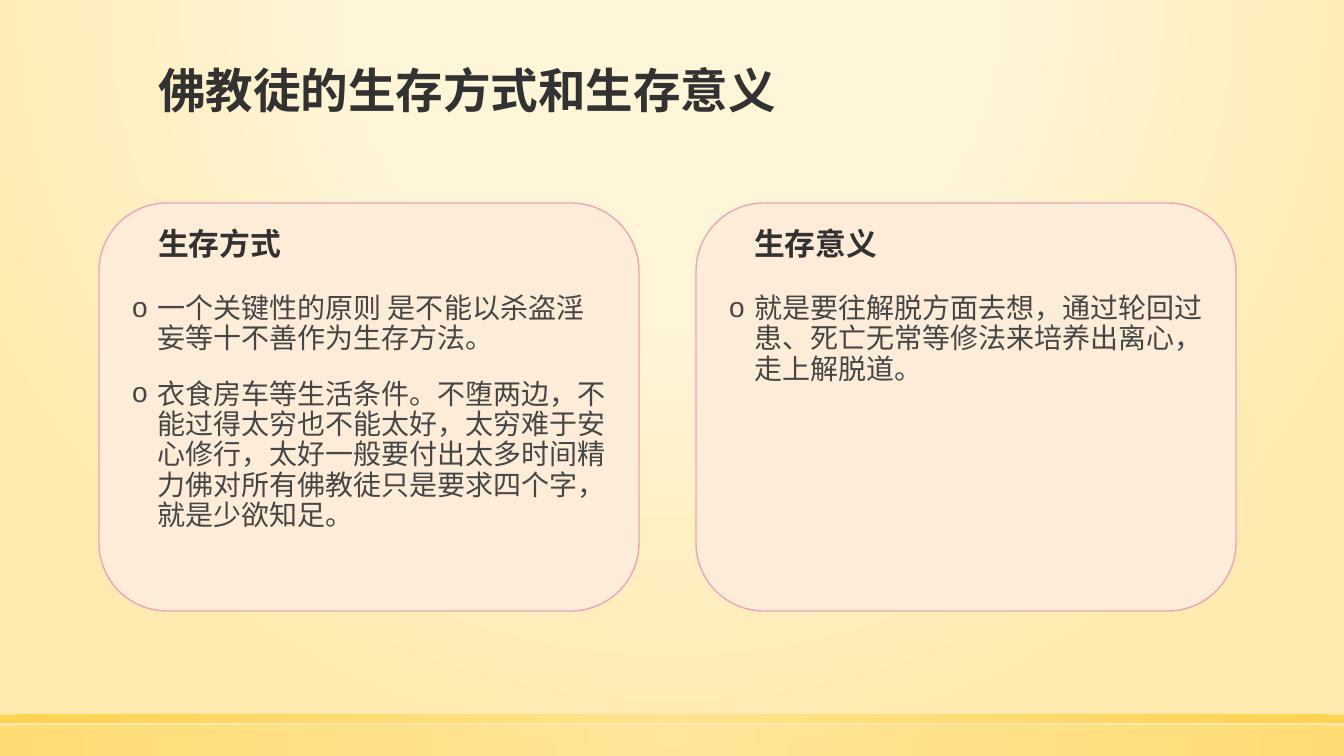
import lxml.etree
import pptx
import pptx.dml.color
import pptx.enum.shapes
import pptx.enum.text
import pptx.oxml
import pptx.oxml.ns
import pptx.util

EMU_PER_PX = 914400 / 100.8
FONT = "Noto Sans CJK SC"
SHAPES = pptx.enum.shapes.MSO_SHAPE
ANCHORS = pptx.enum.text.MSO_ANCHOR


def px(length):
    return pptx.util.Emu(round(length * EMU_PER_PX))


def color(value):
    return pptx.dml.color.RGBColor.from_string(value)


def apply_format(target, values):
    for name, value in values.items():
        setattr(target, name, value)


class SlideBuilder:
    heading_color = "323232"
    body_color = "464646"
    card_fill = "FCECD8"
    card_line = "E9A6B8"

    def __init__(self, slide):
        self.slide = slide
        self.placeholders = {
            placeholder.placeholder_format.idx: placeholder
            for placeholder in slide.placeholders
        }

    def gradient(self, solid_fill, stops, focus):
        stop_xml = "".join(
            f'<a:gs pos="{position * 1000}"><a:srgbClr val="{color(value)}">'
            f'<a:alpha val="{alpha * 1000}"/></a:srgbClr></a:gs>'
            for position, value, alpha in stops
        )
        left, top, right, bottom = (percent * 1000 for percent in focus)
        gradient = pptx.oxml.parse_xml(
            f'<a:gradFill {pptx.oxml.ns.nsdecls("a")} rotWithShape="1">'
            f'<a:gsLst>{stop_xml}</a:gsLst><a:path path="circle">'
            f'<a:fillToRect l="{left}" t="{top}" r="{right}" b="{bottom}"/>'
            "</a:path></a:gradFill>"
        )
        solid_fill.getparent().replace(solid_fill, gradient)

    def background(self, stops, focus):
        self.slide.background.fill.solid()
        solid_fill = self.slide.element.xpath("./p:cSld/p:bg/p:bgPr/a:solidFill")[0]
        self.gradient(solid_fill, stops, focus)

    def shape(self, kind, box, fill):
        shape = self.slide.shapes.add_shape(kind, *map(px, box))
        shape.shadow.inherit = False
        shape.fill.solid()
        shape.fill.fore_color.rgb = color(fill)
        self.slide.shapes.title.element.addprevious(shape.element)
        return shape

    def bar(self, box, alpha):
        shape = self.shape(SHAPES.RECTANGLE, box, "FFCD36")
        shape.line.fill.background()
        solid_fill = shape.element.xpath("./p:spPr/a:solidFill")[0]
        stops = [(0, "FFE186", alpha), (100, "FFCD36", alpha)]
        self.gradient(solid_fill, stops, (50, 50, 50, 50))

    def card(self, box):
        shape = self.shape(SHAPES.ROUNDED_RECTANGLE, box, self.card_fill)
        shape.line.color.rgb = color(self.card_line)
        shape.line.width = pptx.util.Pt(1)

    def text(self, index, box, texts, size, text_color, bold, anchor,
             line_spacing=0.9, space_before=0):
        shape = self.placeholders[index]
        apply_format(shape, dict(zip(("left", "top", "width", "height"), map(px, box))))
        frame = shape.text_frame
        frame.text = "\n".join(texts)
        apply_format(frame, {
            "word_wrap": True,
            "auto_size": pptx.enum.text.MSO_AUTO_SIZE.NONE,
            "vertical_anchor": anchor,
        })
        for paragraph in frame.paragraphs:
            apply_format(paragraph, {
                "alignment": pptx.enum.text.PP_ALIGN.LEFT,
                "line_spacing": line_spacing,
                "space_before": pptx.util.Pt(space_before),
            })
            for run in paragraph.runs:
                apply_format(run.font, {
                    "name": FONT, "size": pptx.util.Pt(size), "bold": bold,
                })
                run.font.color.rgb = color(text_color)
        for latin in shape.element.xpath(".//a:rPr/a:latin"):
            east_asian = lxml.etree.Element(pptx.oxml.ns.qn("a:ea"), typeface=FONT)
            latin.addnext(east_asian)
        return shape

    def title(self, box, text):
        self.text(0, box, [text], 34, self.heading_color, True, ANCHORS.BOTTOM)

    def heading(self, index, box, text):
        self.text(index, box, [text], 22, self.heading_color, True, ANCHORS.MIDDLE)

    def bullets(self, index, box, texts):
        shape = self.text(index, box, texts, 20, self.body_color, False, ANCHORS.TOP,
                          pptx.util.Pt(21.6), 18)
        for properties in shape.element.xpath(".//a:pPr"):
            properties.set("marL", str(pptx.util.Inches(0.3)))
            properties.set("indent", str(pptx.util.Inches(-0.25)))
            lxml.etree.SubElement(properties, pptx.oxml.ns.qn("a:buChar"), char="o")


def main():
    presentation = pptx.Presentation()
    presentation.slide_width = px(1344)
    presentation.slide_height = px(756)
    comparison_layout = presentation.slide_layouts[4]
    builder = SlideBuilder(presentation.slides.add_slide(comparison_layout))

    builder.background(
        [(0, "FFF5D7", 59), (40, "FFF5D7", 66), (100, "FFEBAF", 100)],
        (50, -80, 50, 180),
    )
    builder.bar((0, 726, 1344, 30), 50)
    builder.bar((0, 715, 1344, 8), 80)
    builder.title((148, 51, 1048, 73), "佛教徒的生存方式和生存意义")

    columns = [
        (99, 148, 473, "生存方式", [
            "一个关键性的原则 是不能以杀盗淫妄等十不善作为生存方法。",
            "衣食房车等生活条件。不堕两边，不能过得太穷也不能太好，太穷难于安心修行，"
            "太好一般要付出太多时间精力佛对所有佛教徒只是要求四个字，就是少欲知足。",
        ]),
        (696, 744, 453, "生存意义", [
            "就是要往解脱方面去想，通过轮回过患、死亡无常等修法来培养出离心，走上解脱道。",
        ]),
    ]
    for column, (left, heading_left, heading_width, heading, points) in enumerate(columns):
        builder.card((left, 203, 540, 408))
        builder.heading(1 + 2 * column, (heading_left, 203, heading_width, 85), heading)
        builder.bullets(2 + 2 * column, (left + 18, 289, 504, 322), points)

    presentation.save("out.pptx")


if __name__ == "__main__":
    main()
